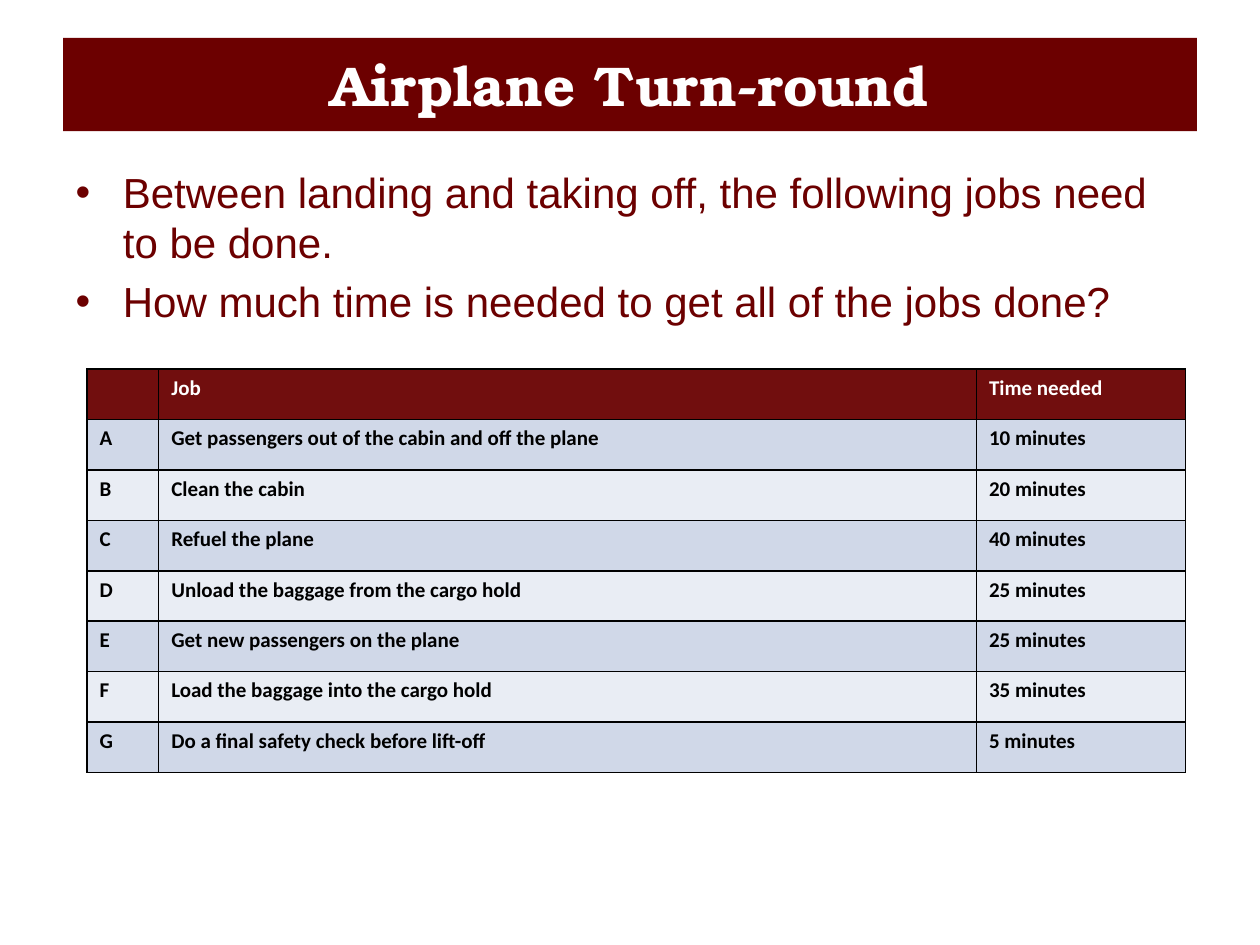
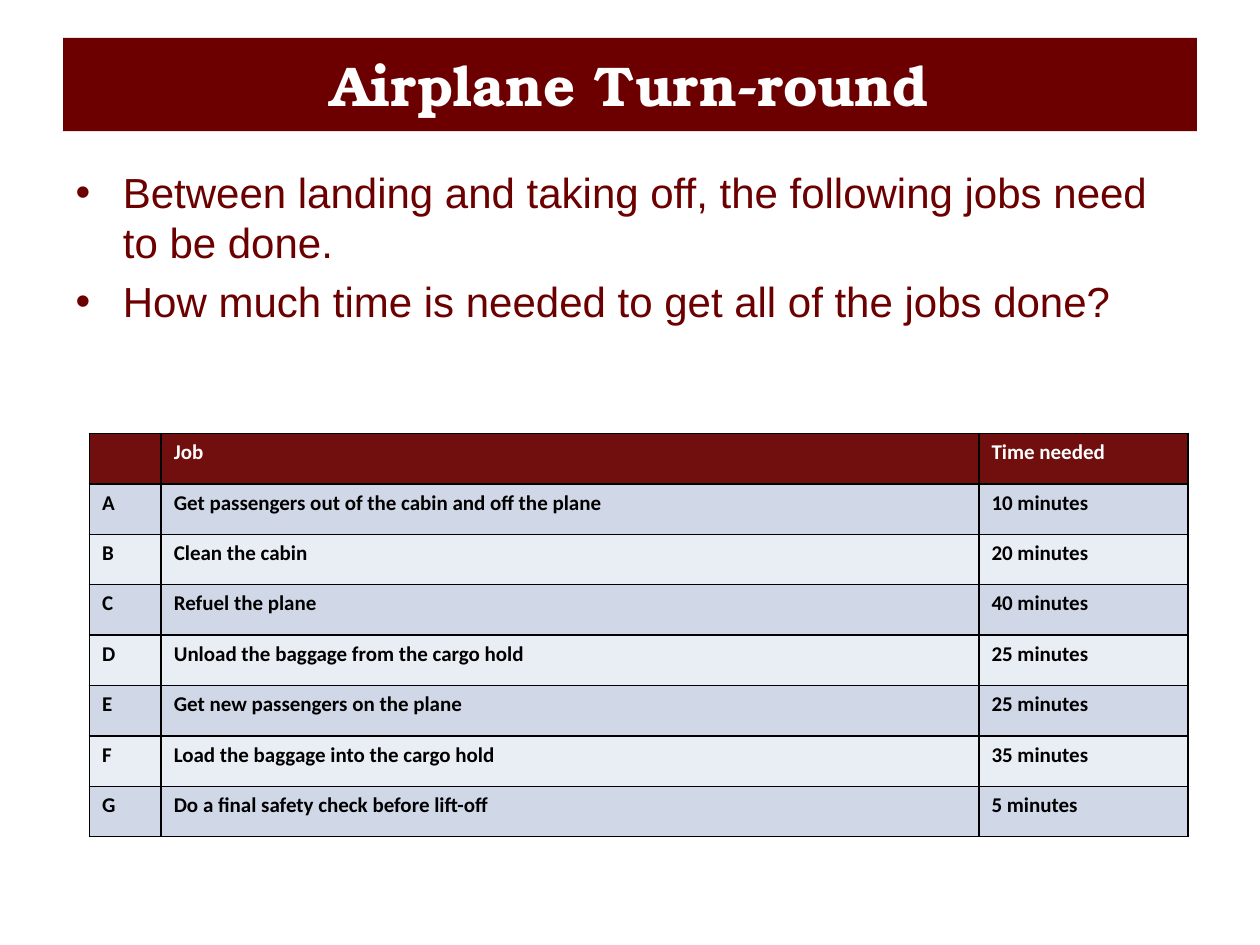
from lxml.etree import SubElement
from pptx import Presentation
from pptx.dml.color import RGBColor
from pptx.enum.text import MSO_ANCHOR, MSO_AUTO_SIZE, PP_ALIGN
from pptx.oxml.ns import qn
from pptx.util import Inches, Pt

COLORS = {
    "maroon": "6C0000",
    "head": "710E0E",
    "odd": "D0D8E8",
    "even": "E9EDF4",
    "white": "FFFFFF",
    "black": "000000",
}
TITLE = "Airplane Turn-round"
POINTS = [
    "Between landing and taking off, the following jobs need to be done.",
    "How much time is needed to get all of the jobs done?",
]
JOBS = [
    ("", "Job", "Time needed"),
    ("A", "Get passengers out of the cabin and off the plane", "10 minutes"),
    ("B", "Clean the cabin", "20 minutes"),
    ("C", "Refuel the plane", "40 minutes"),
    ("D", "Unload the baggage from the cargo hold", "25 minutes"),
    ("E", "Get new passengers on the plane", "25 minutes"),
    ("F", "Load the baggage into the cargo hold", "35 minutes"),
    ("G", "Do a final safety check before lift-off", "5 minutes"),
]
WIDTHS = (0.57, 6.49, 1.66)
ROW = 0.4


def color(name):
    return RGBColor.from_string(COLORS[name])


def place(shape, left, top, width, height):
    shape.left, shape.top = Inches(left), Inches(top)
    shape.width, shape.height = Inches(width), Inches(height)


def style(para, face, size, tint, bold=False):
    for run in para.runs:
        font = run.font
        font.name, font.size, font.bold = face, Pt(size), bold
        font.color.rgb = color(tint)


def add_title(slide):
    title = slide.shapes.title
    place(title, 0.5, 0.3, 9, 0.74)
    title.fill.solid()
    title.fill.fore_color.rgb = color("maroon")
    frame = title.text_frame
    frame.text = TITLE
    frame.auto_size = MSO_AUTO_SIZE.NONE
    frame.vertical_anchor = MSO_ANCHOR.MIDDLE
    para = frame.paragraphs[0]
    para.alignment = PP_ALIGN.CENTER
    style(para, "TeX Gyre Bonum", 32, "white", True)


def add_points(slide, height):
    body = slide.placeholders[1]
    place(body, 0.5, 1.27, 9, height)
    frame = body.text_frame
    frame.text = "\n".join(POINTS)
    frame.auto_size = MSO_AUTO_SIZE.NONE
    for para in frame.paragraphs:
        style(para, "Arial", 24, "maroon")


def add_border(cell):
    props = cell._tc.get_or_add_tcPr()
    for side in ("lnL", "lnR", "lnT", "lnB"):
        line = SubElement(props, qn(f"a:{side}"), w=str(Pt(1)))
        fill = SubElement(line, qn("a:solidFill"))
        SubElement(fill, qn("a:srgbClr"), val=COLORS["black"])


def fill_cell(cell, text, back, tint):
    add_border(cell)
    cell.fill.solid()
    cell.fill.fore_color.rgb = color(back)
    cell.text = text
    para = cell.text_frame.paragraphs[0]
    style(para, "Calibri", 12, tint, True)
    if not text:
        # Keeps the blank cell from stretching its row
        SubElement(para._p, qn("a:endParaRPr"), sz="1200")


def add_jobs(slide, left, top):
    table = slide.shapes.add_table(
        len(JOBS), len(WIDTHS), Inches(left), Inches(top),
        Inches(sum(WIDTHS)), Inches(ROW * len(JOBS))).table
    for col, width in zip(table.columns, WIDTHS):
        col.width = Inches(width)
    for r, job in enumerate(JOBS):
        table.rows[r].height = Inches(ROW)
        back = "head" if r == 0 else "odd" if r % 2 else "even"
        tint = "black" if r else "white"
        for c, text in enumerate(job):
            fill_cell(table.cell(r, c), text, back, tint)


def main():
    deck = Presentation()
    deck.slide_width, deck.slide_height = Inches(10), Inches(7.5)
    for height, left, top in ((1.66, 0.69, 2.93), (1.82, 0.71, 3.44)):
        slide = deck.slides.add_slide(deck.slide_layouts[1])
        add_points(slide, height)
        add_title(slide)
        add_jobs(slide, left, top)
    deck.save("out.pptx")


if __name__ == "__main__":
    main()
